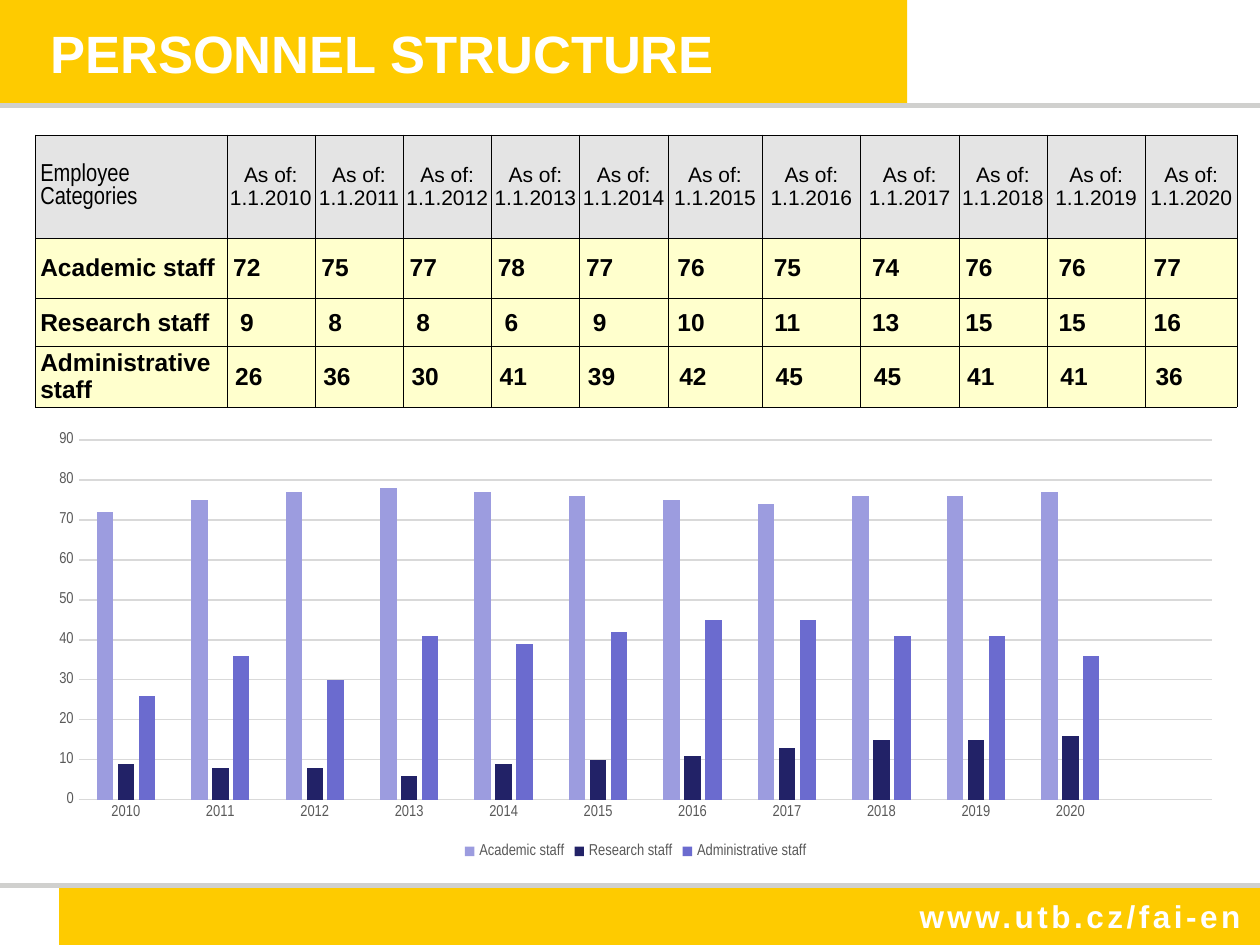
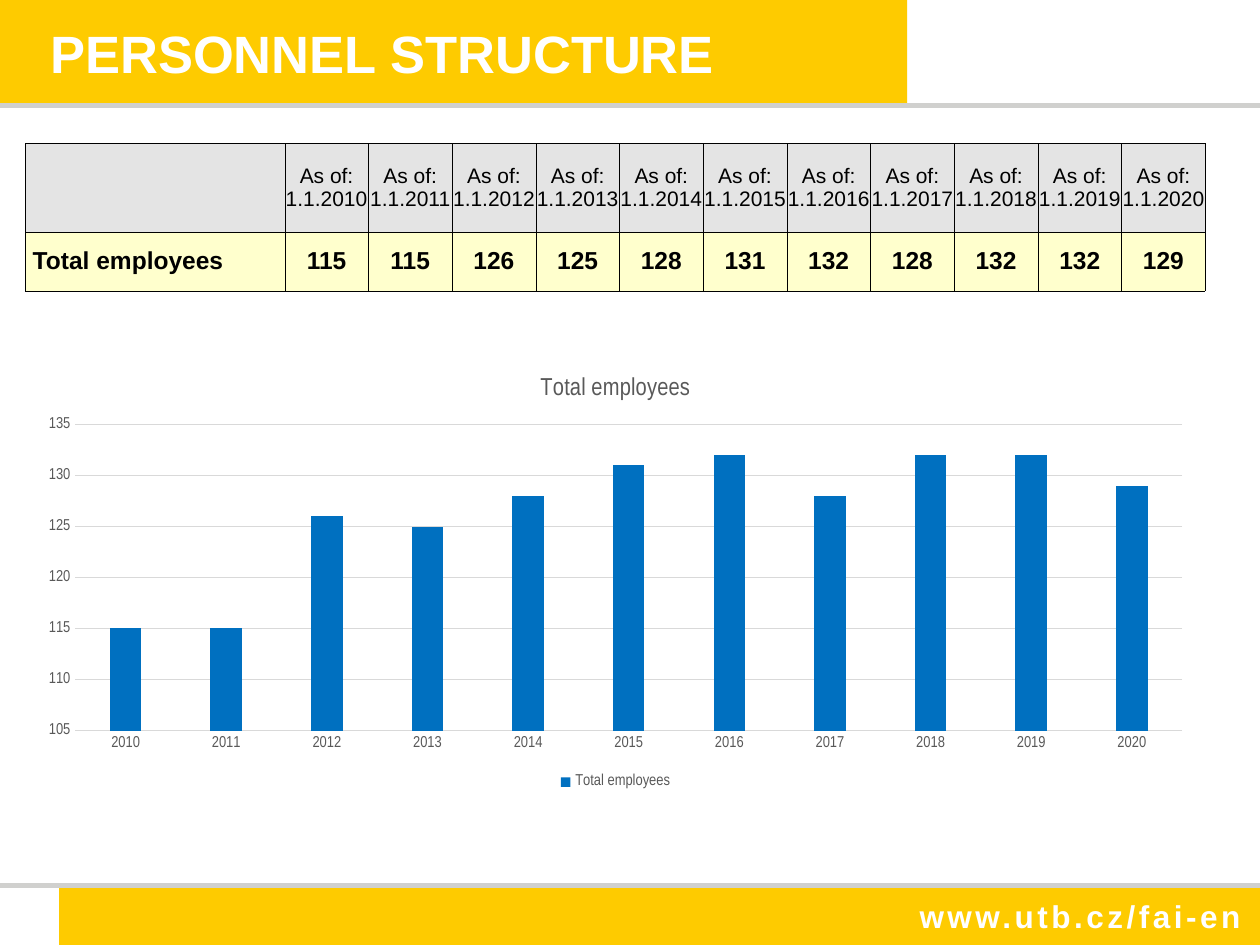
"""Build two slides on personnel structure, each with a table and a column chart."""
import pptx
import pptx.chart.data
import pptx.dml.color
import pptx.enum.chart
import pptx.enum.shapes
import pptx.enum.text
import pptx.oxml
import pptx.oxml.ns
import pptx.util
from lxml import etree

Inches, Pt = pptx.util.Inches, pptx.util.Pt
RGBColor = pptx.dml.color.RGBColor
Anchor = pptx.enum.text.MSO_ANCHOR
Align = pptx.enum.text.PP_ALIGN

YELLOW = RGBColor(0xFE, 0xCB, 0x00)
RULE_GREY = RGBColor(0xD0, 0xD0, 0xCE)
HEADER_GREY = RGBColor(0xE4, 0xE4, 0xE4)
CREAM = RGBColor(0xFF, 0xFF, 0xCD)
GRID_GREY = RGBColor(0xD9, 0xD9, 0xD9)
LABEL_GREY = RGBColor(0x59, 0x59, 0x59)
WHITE = RGBColor(0xFF, 0xFF, 0xFF)
BLACK = RGBColor(0, 0, 0)
LAVENDER = RGBColor(0x9C, 0x9C, 0xDF)
NAVY = RGBColor(0x22, 0x22, 0x67)
VIOLET = RGBColor(0x6B, 0x6B, 0xCF)
BLUE = RGBColor(0x00, 0x70, 0xC0)
SANS, NARROW = "Arial", "Arial Narrow"

TITLE = "PERSONNEL STRUCTURE"
WEBSITE = "www.utb.cz/fai-en"
BANDS = [(0, 0, 7.2, 0.84), (0.47, 7.04, 9.53, 0.47)]
RULES = [0.84, 7.03]
YEARS = [str(year) for year in range(2010, 2021)]

PAGES = [
    {
        "corner": "Employee Categories",
        "staff": [
            ("Academic staff", [72, 75, 77, 78, 77, 76, 75, 74, 76, 76, 77], LAVENDER),
            ("Research staff", [9, 8, 8, 6, 9, 10, 11, 13, 15, 15, 16], NAVY),
            ("Administrative staff", [26, 36, 30, 41, 39, 42, 45, 45, 41, 41, 36], VIOLET),
        ],
        "left": 0.28, "width": 9.53, "table_top": 1.07, "chart_top": 3.36,
        "columns": [1.52] + [0.7] * 5 + [0.75, 0.78, 0.78, 0.7, 0.78, 0.73],
        "rows": [0.82, 0.48, 0.38, 0.48],
        "label_inset": 0.04, "count_insets": [0.38, 0.38, 0.35],
        "categories": YEARS + [""], "scale": (0, 90, 10), "chart_title": None,
    },
    {
        "corner": "",
        "staff": [
            ("Total employees",
             [115, 115, 126, 125, 128, 131, 132, 128, 132, 132, 129], BLUE),
        ],
        "left": 0.2, "width": 9.37, "table_top": 1.14, "chart_top": 2.81,
        "columns": [2.06] + [(9.37 - 2.06) / len(YEARS)] * len(YEARS),
        "rows": [0.7, 0.47],
        "label_inset": 0.06, "count_insets": [0],
        "categories": YEARS, "scale": (105, 135, 5), "chart_title": "Total employees",
    },
]


def style_font(font, size, color, name, bold=False):
    font.size, font.name, font.bold = Pt(size), name, bold
    font.color.rgb = color


def add_frame(slide, layout):
    """Draw the bands, rules and web address, and keep them on the layout."""
    for placeholder in list(layout.placeholders)[1:]:
        layout.shapes.element.remove(placeholder.element)
    frame = []
    for box in BANDS:
        band = slide.shapes.add_shape(
            pptx.enum.shapes.MSO_SHAPE.RECTANGLE, *map(Inches, box))
        band.shadow.inherit = False
        band.fill.solid()
        band.fill.fore_color.rgb = YELLOW
        band.line.fill.background()
        frame.append(band)
    for y in RULES:
        rule = slide.shapes.add_connector(
            pptx.enum.shapes.MSO_CONNECTOR.STRAIGHT, 0, Inches(y), Inches(10), Inches(y))
        rule.line.color.rgb = RULE_GREY
        rule.line.width = Pt(3)
        etree.SubElement(rule.element.spPr, pptx.oxml.ns.qn("a:effectLst"))
        frame.append(rule)
    website = slide.shapes.add_textbox(*map(Inches, (7.2, 7.07, 2.8, 0.4)))
    website.text_frame.word_wrap = False
    website.text_frame.text = WEBSITE
    style_font(website.text_frame.paragraphs[0].font, 18, WHITE, SANS, True)
    website.element.xpath(".//a:r")[0].get_or_add_rPr().set("spc", "200")
    for part in frame + [website]:
        layout.shapes.element.append(part.element)


def add_title(slide):
    title = slide.shapes.title
    title.left, title.top, title.width, title.height = map(Inches, (0, 0, 7.19, 0.84))
    text = title.text_frame
    text.text = TITLE
    text.auto_size = pptx.enum.text.MSO_AUTO_SIZE.NONE
    text.vertical_anchor = Anchor.MIDDLE
    text.margin_left = Inches(0.4)
    text.paragraphs[0].alignment = Align.LEFT
    style_font(text.paragraphs[0].font, 30, WHITE, SANS, True)


def add_borders(cell):
    properties = cell._tc.get_or_add_tcPr()
    for position, side in enumerate(("lnL", "lnR", "lnT", "lnB")):
        border = pptx.oxml.parse_xml(
            f'<a:{side} {pptx.oxml.ns.nsdecls("a")} w="{Pt(0.25)}"><a:solidFill>'
            f'<a:srgbClr val="{BLACK}"/></a:solidFill></a:{side}>')
        properties.insert(position, border)


def fill_cell(cell, text, fill, size, font, bold, align, left=0, right=0):
    cell.text = text
    cell.fill.solid()
    cell.fill.fore_color.rgb = fill
    cell.vertical_anchor = Anchor.MIDDLE
    cell.margin_left, cell.margin_right = Inches(left), Inches(right)
    cell.margin_top = cell.margin_bottom = 0
    for paragraph in cell.text_frame.paragraphs:
        paragraph.alignment = align
        style_font(paragraph.font, size, BLACK, font, bold)
    add_borders(cell)


def add_staff_table(slide, page):
    columns, rows = page["columns"], page["rows"]
    table = slide.shapes.add_table(
        len(rows), len(columns), Inches(page["left"]), Inches(page["table_top"]),
        Inches(page["width"]), Inches(sum(rows))).table
    table.first_row = table.horz_banding = False
    for column, width in zip(table.columns, columns):
        column.width = Inches(width)
    for row, height in zip(table.rows, rows):
        row.height = Inches(height)
    inset = page["label_inset"]
    fill_cell(table.cell(0, 0), page["corner"], HEADER_GREY, 14, NARROW, False,
              Align.LEFT, inset)
    for c, year in enumerate(YEARS, 1):
        fill_cell(table.cell(0, c), f"As of:\n1.1.{year}", HEADER_GREY, 12, SANS, False,
                  Align.CENTER)
    for r, ((label, counts, _), right) in enumerate(
            zip(page["staff"], page["count_insets"]), 1):
        fill_cell(table.cell(r, 0), label, CREAM, 14, SANS, True, Align.LEFT, inset)
        for c, count in enumerate(counts, 1):
            fill_cell(table.cell(r, c), str(count), CREAM, 14, SANS, True,
                      Align.CENTER, right=right)


def add_staff_chart(slide, page):
    data = pptx.chart.data.CategoryChartData()
    data.categories = page["categories"]
    for label, counts, _ in page["staff"]:
        data.add_series(label, counts + [None] * (len(page["categories"]) - len(counts)))
    chart = slide.shapes.add_chart(
        pptx.enum.chart.XL_CHART_TYPE.COLUMN_CLUSTERED, Inches(page["left"]),
        Inches(page["chart_top"]), Inches(page["width"]), Inches(3.5), data).chart
    style_font(chart.font, 10, BLACK, NARROW)
    chart.has_title = page["chart_title"] is not None
    if chart.has_title:
        heading = chart.chart_title.text_frame
        heading.text = page["chart_title"]
        style_font(heading.paragraphs[0].font, 14, LABEL_GREY, NARROW)

    chart.has_legend = True
    chart.legend.position = pptx.enum.chart.XL_LEGEND_POSITION.BOTTOM
    chart.legend.include_in_layout = False
    style_font(chart.legend.font, 9, LABEL_GREY, NARROW)

    plot = chart.plots[0]
    plot.gap_width, plot.overlap, plot.vary_by_categories = 219, -27, False
    for series, (_, _, color) in zip(plot.series, page["staff"]):
        series.format.fill.solid()
        series.format.fill.fore_color.rgb = color

    years, counts = chart.category_axis, chart.value_axis
    for axis in (years, counts):
        axis.major_tick_mark = axis.minor_tick_mark = pptx.enum.chart.XL_TICK_MARK.NONE
        style_font(axis.tick_labels.font, 9, LABEL_GREY, NARROW)
    counts.minimum_scale, counts.maximum_scale, counts.major_unit = page["scale"]
    counts.format.line.fill.background()
    for line in (years.format.line, counts.major_gridlines.format.line):
        line.color.rgb = GRID_GREY
        line.width = Pt(0.75)


def main():
    deck = pptx.Presentation()
    deck.slide_width, deck.slide_height = Inches(10), Inches(7.5)
    layout = deck.slide_layouts.get_by_name("Title Only")
    for number, page in enumerate(PAGES):
        slide = deck.slides.add_slide(layout)
        if number == 0:
            add_frame(slide, layout)
        add_title(slide)
        add_staff_table(slide, page)
        add_staff_chart(slide, page)
    deck.save("out.pptx")


if __name__ == "__main__":
    main()
